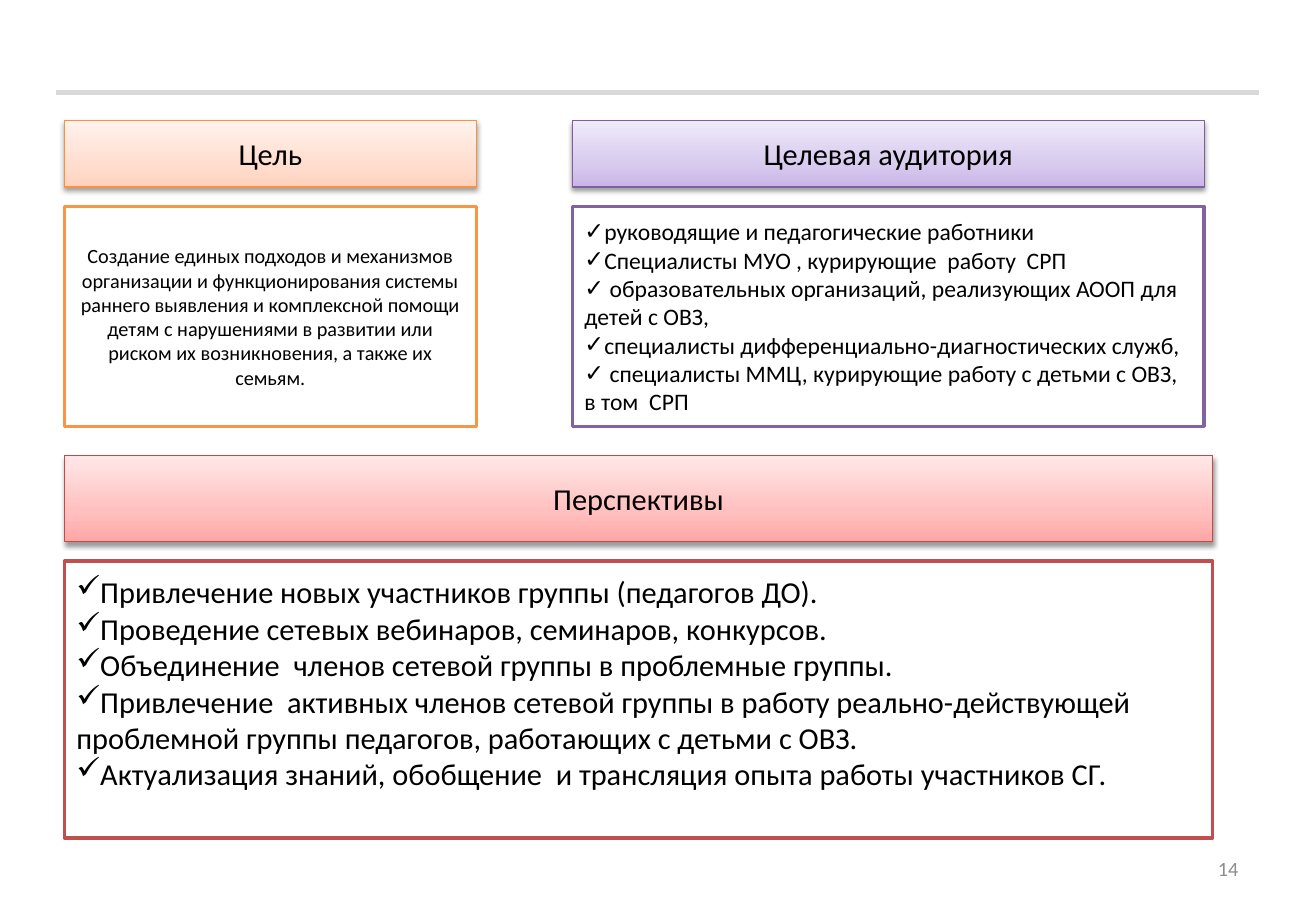
from copy import deepcopy
from lxml import etree
from pptx import Presentation
from pptx.dml.color import RGBColor
from pptx.enum.shapes import MSO_CONNECTOR, MSO_SHAPE
from pptx.enum.text import MSO_ANCHOR, MSO_AUTO_SIZE, PP_ALIGN
from pptx.oxml import parse_xml
from pptx.oxml.ns import nsdecls, qn
from pptx.util import Inches, Pt

RECT, LINE = MSO_SHAPE.RECTANGLE, MSO_CONNECTOR.STRAIGHT
MIDDLE, TOP, FIXED = MSO_ANCHOR.MIDDLE, MSO_ANCHOR.TOP, MSO_AUTO_SIZE.NONE
LEFT, CENTER, RIGHT = PP_ALIGN.LEFT, PP_ALIGN.CENTER, PP_ALIGN.RIGHT
BLACK = RGBColor(0x00, 0x00, 0x00)
WHITE = RGBColor(0xFF, 0xFF, 0xFF)
GRAY = RGBColor(0x8C, 0x8C, 0x8C)
SILVER = RGBColor(0xD9, 0xD9, 0xD9)
ORANGE = RGBColor(0xF7, 0x96, 0x46)
AMBER = RGBColor(0xF6, 0x92, 0x40)
PEACH = (RGBColor(0xFF, 0xD2, 0xBD), RGBColor(0xFF, 0xDE, 0xD0), RGBColor(0xFF, 0xF2, 0xED))
PURPLE = RGBColor(0x80, 0x64, 0xA2)
PLUM = RGBColor(0x7D, 0x60, 0xA0)
LILAC = (RGBColor(0xC9, 0xB5, 0xE8), RGBColor(0xD8, 0xCB, 0xEE), RGBColor(0xF0, 0xEA, 0xF9))
RED = RGBColor(0xC0, 0x50, 0x4D)
BRICK = RGBColor(0xBF, 0x4C, 0x48)
ROSE = (RGBColor(0xFF, 0xA6, 0xA5), RGBColor(0xFF, 0xC0, 0xBF), RGBColor(0xFF, 0xE7, 0xE7))
STOPS = (0, 0.35, 1)
SHADOW = (
    f'<a:outerShdw {nsdecls("a")} blurRad="{Pt(3.1)}" dist="{Pt(1.6)}" dir="5400000" rotWithShape="0">'
    '<a:srgbClr val="000000"><a:alpha val="38000"/></a:srgbClr></a:outerShdw>'
)

GOAL = [
    "Создание единых подходов и механизмов организации и функционирования системы "
    "раннего выявления и комплексной помощи детям с нарушениями в развитии или "
    "риском их возникновения, а также их семьям."
]
PEOPLE = [
    "руководящие и педагогические работники",
    "Специалисты МУО , курирующие  работу  СРП",
    " образовательных организаций, реализующих АООП для детей с ОВЗ,",
    "специалисты дифференциально-диагностических служб,",
    " специалисты ММЦ, курирующие работу с детьми с ОВЗ, в том  СРП",
]
PLANS = [
    "Привлечение новых участников группы (педагогов ДО).",
    "Проведение сетевых вебинаров, семинаров, конкурсов.",
    "Объединение  членов сетевой группы в проблемные группы.",
    "Привлечение  активных членов сетевой группы в работу реально-действующей "
    "проблемной группы педагогов, работающих с детьми с ОВЗ.",
    "Актуализация знаний, обобщение  и трансляция опыта работы участников СГ.",
]


class Board:
    """Holds the slide and the style of its boxes."""

    def __init__(self, deck):
        self.slide = deck.slides.add_slide(deck.slide_layouts[4])
        self.shapes = self.slide.shapes
        self.holders = {p.placeholder_format.idx: p for p in self.slide.placeholders}
        title = self.holders[0].element
        title.getparent().remove(title)
        self.font = {"name": "Calibri", "bold": False}
        self.frame = {
            "word_wrap": True, "auto_size": FIXED,
            "margin_left": Inches(0.1), "margin_right": Inches(0.1),
            "margin_top": Inches(0.05), "margin_bottom": Inches(0.05),
        }

    def apply(self, target, values):
        for name, value in values.items():
            setattr(target, name, value)

    def text(self, shape, lines, size, align=CENTER, color=BLACK, check=False, **more):
        frame = shape.text_frame
        self.apply(frame, {**self.frame, "vertical_anchor": MIDDLE, **more})
        for i, line in enumerate(lines):
            para = frame.paragraphs[0] if i == 0 else frame.add_paragraph()
            self.apply(para, {"alignment": align, "space_before": Pt(0)})
            run = para.add_run()
            run.text = line
            self.apply(run.font, {**self.font, "size": Pt(size)})
            run.font.color.rgb = color
            props = para._p.get_or_add_pPr()
            props.set("marL", "0")
            props.set("indent", "0")
            mark = etree.SubElement(props, qn("a:buChar" if check else "a:buNone"))
            if check:
                mark.set("char", "✓")

    def box(self, spot, line, width, idx=None):
        place = [Inches(v) for v in spot]
        if idx is None:
            shape = self.shapes.add_shape(RECT, *place)
        else:
            shape = self.holders[idx]
            self.apply(shape, dict(zip(("left", "top", "width", "height"), place)))
        shape.line.color.rgb = line
        shape.line.width = Pt(width)
        return shape

    def head(self, spot, label, line, tones, idx=None):
        shape = self.box(spot, line, 0.75, idx)
        fill = shape.fill
        fill.gradient()
        fill.gradient_angle = 90
        stops = shape.element.spPr.find(".//" + qn("a:gsLst"))
        stops.append(deepcopy(stops[0]))
        for stop, place, tone in zip(fill.gradient_stops, STOPS, tones):
            stop.position = place
            stop.color.rgb = tone
        shape.shadow.inherit = False
        shape.element.spPr.find(qn("a:effectLst")).append(parse_xml(SHADOW))
        self.text(shape, [label], 18)

    def body(self, spot, lines, size, line, idx=None, **more):
        shape = self.box(spot, line, 2, idx)
        shape.fill.solid()
        shape.fill.fore_color.rgb = WHITE
        shape.shadow.inherit = False
        self.text(shape, lines, size, **more)

    def rule(self, left, right, top):
        line = self.shapes.add_connector(LINE, Inches(left), Inches(top), Inches(right), Inches(top))
        line.line.color.rgb = SILVER
        line.line.width = Pt(3)
        etree.SubElement(line.element.spPr, qn("a:effectLst"))

    def number(self, spot, value):
        shape = self.shapes.add_textbox(*[Inches(v) for v in spot])
        self.text(shape, [value], 12, RIGHT, GRAY)


def main():
    deck = Presentation()
    deck.slide_width, deck.slide_height = Inches(10.83), Inches(7.5)
    board = Board(deck)
    board.rule(0.46, 10.36, 0.76)
    board.head((0.53, 0.99, 3.39, 0.55), "Цель", AMBER, PEACH, 1)
    board.body((0.53, 1.7, 3.39, 1.81), GOAL, 12, ORANGE, 2)
    board.head((4.71, 0.99, 5.2, 0.55), "Целевая аудитория", PLUM, LILAC, 3)
    board.body((4.71, 1.7, 5.2, 1.81), PEOPLE, 14, PURPLE, 4, align=LEFT, check=True)
    board.head((0.53, 3.75, 9.45, 0.71), "Перспективы", BRICK, ROSE)
    board.body((0.53, 4.62, 9.45, 2.28), PLANS, 18, RED, align=LEFT, check=True,
               vertical_anchor=TOP, margin_top=Inches(0.1))
    board.number((7.76, 6.95, 2.53, 0.4), "14")
    deck.save("out.pptx")


if __name__ == "__main__":
    main()
